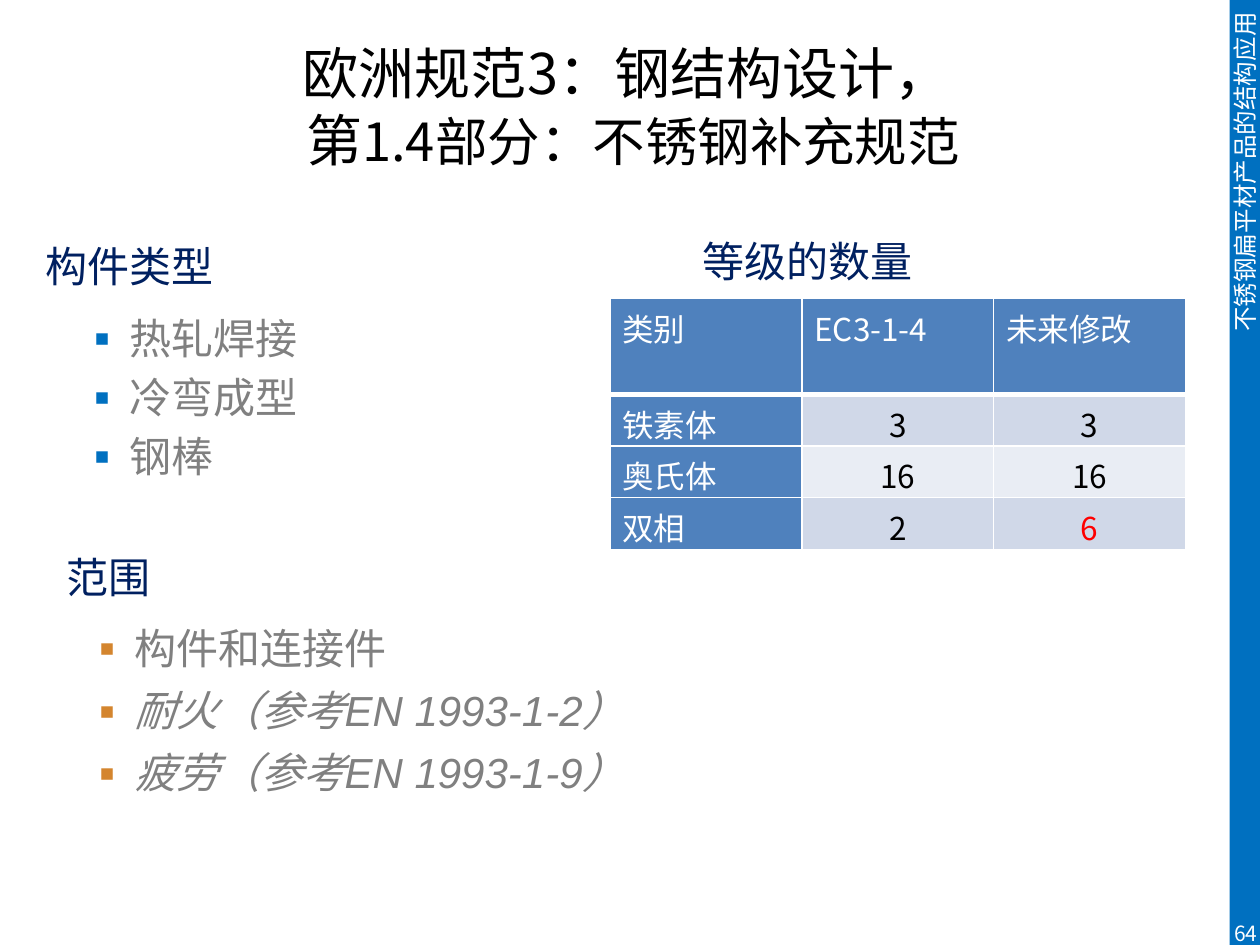
from lxml.etree import SubElement
from pptx import Presentation
from pptx.dml.color import RGBColor
from pptx.enum.shapes import MSO_SHAPE
from pptx.enum.text import MSO_ANCHOR as Anchor, MSO_AUTO_SIZE as AutoSize, PP_ALIGN as Align
from pptx.oxml.ns import qn
from pptx.util import Inches, Pt

COLUMNS, ROWS = 100, 75
CJK = "Noto Sans CJK SC"
WHITE, BLACK, GREY, NAVY = "FFFFFF", "000000", "808080", "002060"
BLUE, ORANGE, RED, HEADER = "0070C0", "D4852E", "FF0000", "4F81BD"
BANDS = "D0D8E8", "E9EDF4"

presentation = Presentation()
presentation.slide_width, presentation.slide_height = Inches(10), Inches(7.5)
COLUMN = presentation.slide_width / COLUMNS
ROW = presentation.slide_height / ROWS


def color(value):
    return RGBColor.from_string(value)


def place(box):
    """Turn (column, row, columns, rows) into slide lengths."""
    return [int(n * unit) for n, unit in zip(box, (COLUMN, ROW, COLUMN, ROW))]


def move(shape, box):
    shape.left, shape.top, shape.width, shape.height = place(box)


def set_values(target, **values):
    for name, value in values.items():
        setattr(target, name, value)


def add_run(paragraph, text, size, ink, font=CJK, italic=False):
    run = paragraph.add_run()
    run.text = text
    set_values(run.font, size=Pt(size), name=font, italic=italic)
    run.font.color.rgb = color(ink)
    SubElement(run._r.get_or_add_rPr(), qn("a:ea"), typeface=font)


def add_title(slide, box):
    title = slide.shapes.title
    move(title, box)
    set_values(title.text_frame, vertical_anchor=Anchor.MIDDLE, auto_size=AutoSize.NONE)
    paragraph = title.text_frame.paragraphs[0]
    paragraph.alignment = Align.CENTER
    add_run(paragraph, "欧洲规范3：钢结构设计， ", 32, BLACK)
    paragraph.add_line_break()
    add_run(paragraph, "第", 32, BLACK)
    add_run(paragraph, "1.4部分：不锈钢补充规范", 30, BLACK)


def add_label(slide, box, text, size=24, ink=NAVY, font="Arial", align=Align.LEFT, anchor=Anchor.TOP):
    frame = slide.shapes.add_textbox(*place(box)).text_frame
    set_values(frame, word_wrap=True, vertical_anchor=anchor)
    frame.paragraphs[0].alignment = align
    add_run(frame.paragraphs[0], text, size, ink, font)


def fill_list(shape, items, bullet_ink, space, font):
    """Write (text, italic) items as square-bulleted paragraphs."""
    frame = shape.text_frame
    set_values(frame, word_wrap=True, auto_size=AutoSize.NONE)
    for index, (text, italic) in enumerate(items):
        paragraph = frame.add_paragraph() if index else frame.paragraphs[0]
        paragraph.space_before = Pt(space)
        properties = paragraph._p.get_or_add_pPr()
        properties.set("marL", str(Inches(0.38)))
        properties.set("indent", str(-Inches(0.38)))
        SubElement(SubElement(properties, qn("a:buClr")), qn("a:srgbClr"), val=bullet_ink)
        SubElement(properties, qn("a:buFont"), typeface=CJK)
        SubElement(properties, qn("a:buChar"), char="▪")
        add_run(paragraph, text, 24, GREY, font, italic)


def add_members(slide, box):
    body = slide.placeholders[1]
    move(body, box)
    fill_list(body, [(text, False) for text in ("热轧焊接", "冷弯成型", "钢棒")], BLUE, 4.8, CJK)


def add_scope(slide, box):
    items = [("构件和连接件", False), ("耐火（参考EN 1993-1-2）", True), ("疲劳（参考EN 1993-1-9）", True)]
    fill_list(slide.shapes.add_textbox(*place(box)), items, ORANGE, 6.8, "Arial")


def set_borders(cell, bottom):
    properties = cell._tc.get_or_add_tcPr()
    for side, width in zip("LRTB", (1, 1, 1, bottom)):
        line = SubElement(properties, qn(f"a:ln{side}"), w=str(Pt(width)))
        SubElement(SubElement(line, qn("a:solidFill")), qn("a:srgbClr"), val=WHITE)


def add_grades(slide, box):
    data = [("类别", "EC3-1-4", "未来修改"), ("铁素体", "3", "3"), ("奥氏体", "16", "16"), ("双相", "2", "6")]
    table = slide.shapes.add_table(len(data), len(data[0]), *place(box)).table
    for row, texts in enumerate(data):
        table.rows[row].height = int(ROW * (4.1 if row else 7.6))
        for column, text in enumerate(texts):
            cell = table.cell(row, column)
            is_value = row > 0 and column > 0
            set_borders(cell, 1 if row else 3)
            cell.fill.solid()
            cell.fill.fore_color.rgb = color(BANDS[(row - 1) % 2] if is_value else HEADER)
            cell.margin_bottom = 0
            paragraph = cell.text_frame.paragraphs[0]
            set_values(paragraph, space_before=Pt(3.6), alignment=Align.CENTER if is_value else Align.LEFT)
            ink = WHITE if not is_value else RED if text == "6" else BLACK
            add_run(paragraph, text, 18, ink)


def add_sidebar(slide, box):
    bar = slide.shapes.add_shape(MSO_SHAPE.RECTANGLE, *place(box))
    bar.shadow.inherit = False
    bar.fill.solid()
    bar.fill.fore_color.rgb = color(BLUE)
    bar.line.fill.background()
    frame = bar.text_frame
    frame.vertical_anchor = Anchor.MIDDLE
    frame._txBody.bodyPr.set("vert", "vert270")
    frame.paragraphs[0].alignment = Align.RIGHT
    add_run(frame.paragraphs[0], "不锈钢扁平材产品的结构应用", 14, WHITE)


def build_slide():
    slide = presentation.slides.add_slide(presentation.slide_layouts[1])
    add_sidebar(slide, (97.6, 0, 2.4, 75))
    add_title(slide, (3, 2, 94.5, 12.8))
    add_label(slide, (2.6, 18.6, 49.6, 5), "构件类型")
    add_members(slide, (5.5, 24.3, 45.4, 20.6))
    add_label(slide, (4.3, 43.3, 49.6, 5), "范围")
    add_scope(slide, (5.9, 48.9, 90, 20.6))
    add_label(slide, (54.8, 18.2, 38.5, 5), "等级的数量")
    add_grades(slide, (48.4, 23.7, 45.7, 19.9))
    add_label(slide, (96.5, 72.1, 4.3, 4), "64", 12, WHITE, CJK, Align.RIGHT, Anchor.MIDDLE)


build_slide()
presentation.save("out.pptx")
